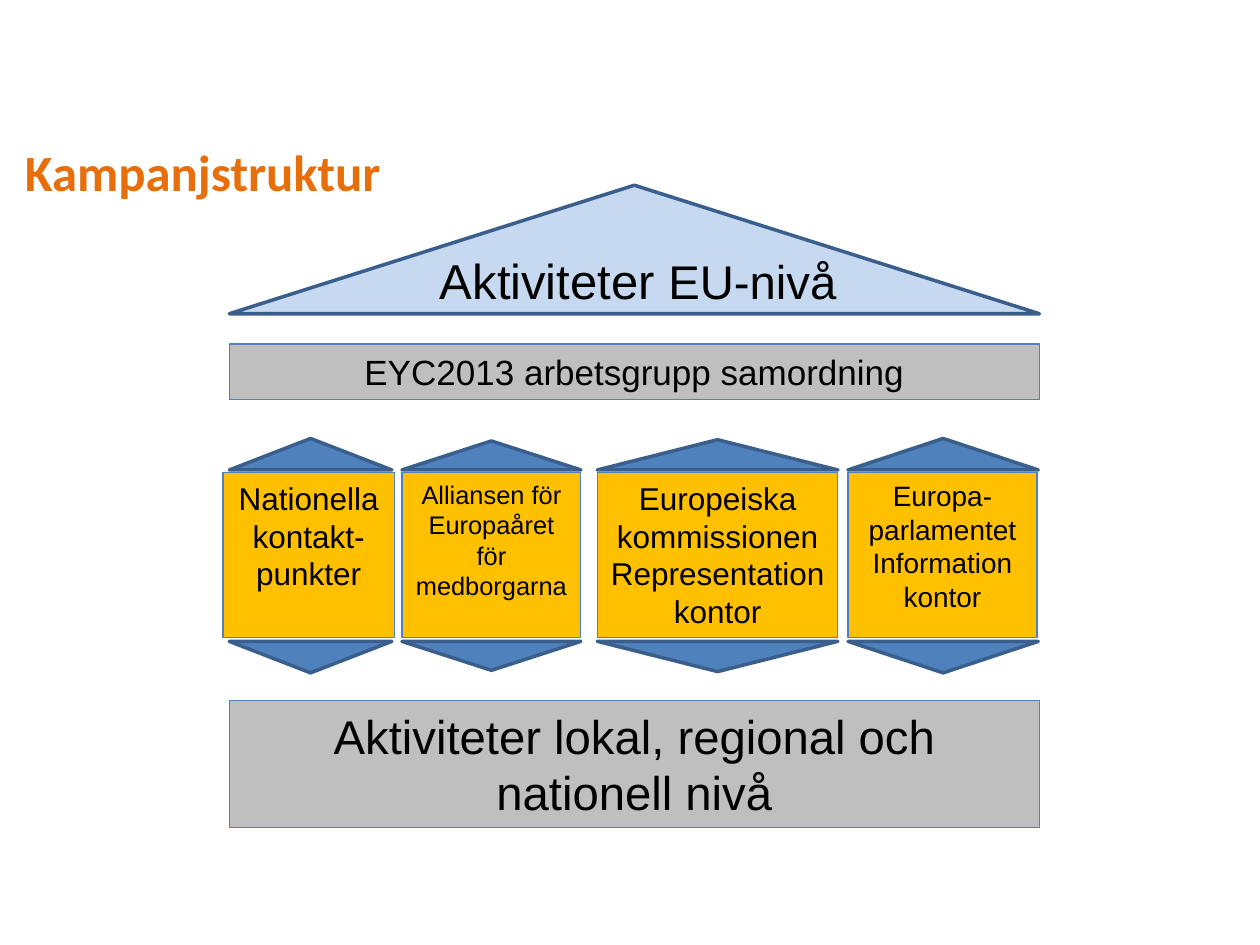
from pptx import Presentation
from pptx.dml.color import RGBColor
from pptx.enum.shapes import MSO_SHAPE as Preset
from pptx.enum.text import MSO_ANCHOR as Anchor, PP_ALIGN as Align
from pptx.util import Inches, Pt

WIDTH, HEIGHT = Inches(10), Inches(7.5)
COLUMN, ROW = WIDTH / 100, HEIGHT / 75

BLACK = RGBColor(0x00, 0x00, 0x00)
ORANGE = RGBColor(0xE8, 0x6E, 0x0A)
PALE_BLUE = RGBColor(0xC6, 0xD9, 0xF1)
BLUE = RGBColor(0x4F, 0x81, 0xBD)
DARK_BLUE = RGBColor(0x3A, 0x5F, 0x8C)
YELLOW = RGBColor(0xFF, 0xC0, 0x00)
GREY = RGBColor(0xBF, 0xBF, 0xBF)

HOUSE_LEFT, HOUSE_WIDTH = 18.2, 64.3
PILLAR_TOP, PILLAR_HEIGHT = 37.5, 13.1
ARROW_BASE, ARROW_TOP = 37.3, 50.9

# Pillar: left, width, arrow left, arrow width, arrow height, text size, paragraphs
PILLARS = [
    (17.7, 13.6, 18.2, 12.9, 2.5, 18, ["Nationella kontakt-", "punkter"]),
    (31.9, 14.2, 31.9, 14.2, 2.3, 14.5, ["Alliansen för Europaåret för medborgarna"]),
    (47.4, 19.1, 47.4, 19.1, 2.4, 18, ["Europeiska kommissionen Representation kontor"]),
    (67.3, 15, 67.3, 15.1, 2.5, 16, ["Europa- parlamentet Information", "kontor"]),
]


def place(left, top, width, height):
    """Turn columns and rows of the grid into slide lengths."""
    return int(left * COLUMN), int(top * ROW), int(width * COLUMN), int(height * ROW)


def write(shape, paragraphs, align=Align.CENTER, **formats):
    """Fill a shape with paragraphs of (text, size) runs."""
    frame = shape.text_frame
    frame.word_wrap = True
    frame.vertical_anchor = Anchor.TOP
    for index, runs in enumerate(paragraphs):
        paragraph = frame.add_paragraph() if index else frame.paragraphs[0]
        paragraph.alignment = align
        for text, size in runs:
            run = paragraph.add_run()
            run.text = text
            run.font.color.rgb = formats.get("color", BLACK)
            settings = {
                "name": formats.get("name", "Arial"),
                "size": Pt(size),
                "bold": formats.get("bold", False),
            }
            for name, value in settings.items():
                setattr(run.font, name, value)


def add_label(slide, box, paragraphs, **formats):
    """Add a text box."""
    write(slide.shapes.add_textbox(*place(*box)), paragraphs, **formats)


def add_outlined(slide, preset, box, fill, line, weight):
    """Add a filled preset shape with an outline and no shadow."""
    shape = slide.shapes.add_shape(preset, *place(*box))
    shape.shadow.inherit = False
    shape.fill.solid()
    shape.fill.fore_color.rgb = fill
    shape.line.color.rgb = line
    shape.line.width = Pt(weight)
    return shape


def add_block(slide, box, fill, size, texts):
    """Add a rectangle with one paragraph for each text."""
    block = add_outlined(slide, Preset.RECTANGLE, box, fill, BLUE, 0.75)
    write(block, [[(text, size)] for text in texts])


def add_triangle(slide, box, fill=BLUE, rotation=0):
    """Add a triangle, turned by rotation degrees."""
    triangle = add_outlined(slide, Preset.ISOSCELES_TRIANGLE, box, fill, DARK_BLUE, 2)
    triangle.rotation = rotation


def add_pillar(slide, left, width, arrow_left, arrow_width, arrow_height, size, texts):
    """Add a pillar with a triangle above and one below."""
    add_block(slide, (left, PILLAR_TOP, width, PILLAR_HEIGHT), YELLOW, size, texts)
    for top, rotation in ((ARROW_BASE - arrow_height, 0), (ARROW_TOP, 180)):
        add_triangle(slide, (arrow_left, top, arrow_width, arrow_height), rotation=rotation)


def main():
    """Build the campaign structure slide."""
    presentation = Presentation()
    presentation.slide_width, presentation.slide_height = WIDTH, HEIGHT
    slide = presentation.slides.add_slide(presentation.slide_layouts[6])

    add_triangle(slide, (HOUSE_LEFT, 14.7, HOUSE_WIDTH, 10.2), PALE_BLUE)
    add_label(slide, (21.5, 19.4, 58.3, 5.5), [[("Aktiviteter ", 28), ("EU-nivå", 27)]])
    add_label(slide, (1, 10.7, 49.6, 5.9), [[("Kampanjstruktur", 29)]],
              align=Align.LEFT, name="Calibri", color=ORANGE, bold=True)
    add_block(slide, (HOUSE_LEFT, 27.3, HOUSE_WIDTH, 4.4), GREY, 20,
              ["EYC2013 arbetsgrupp samordning"])
    for pillar in PILLARS:
        add_pillar(slide, *pillar)
    add_block(slide, (HOUSE_LEFT, 55.6, HOUSE_WIDTH, 10.1), GREY, 27,
              ["Aktiviteter lokal, regional och nationell nivå"])

    presentation.save("out.pptx")


if __name__ == "__main__":
    main()
